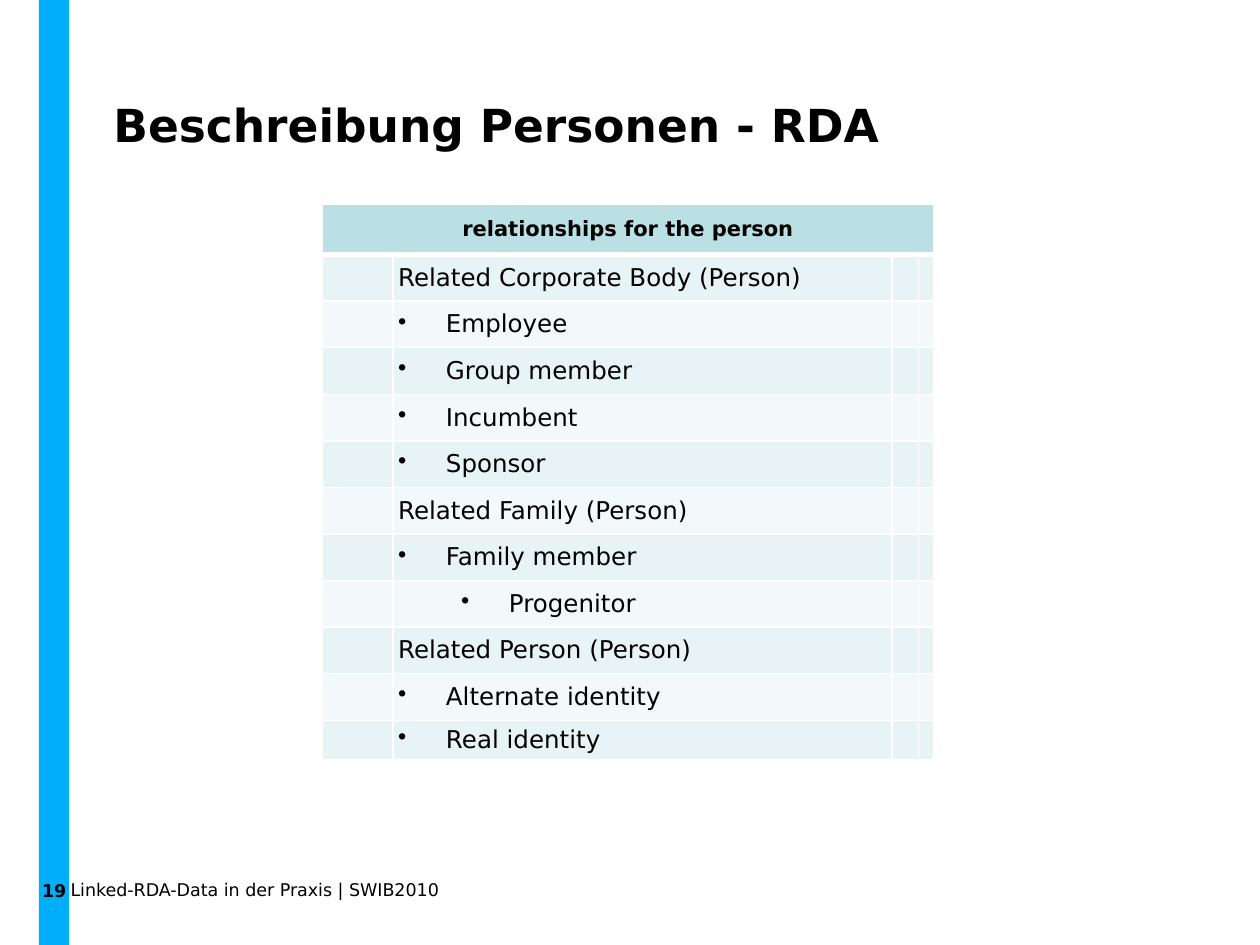
from dataclasses import dataclass

from lxml.etree import SubElement
from pptx import Presentation
from pptx.dml.color import RGBColor
from pptx.enum.shapes import MSO_SHAPE
from pptx.enum.text import MSO_ANCHOR as Anchor, PP_ALIGN as Align
from pptx.oxml.ns import qn
from pptx.util import Inches, Pt


@dataclass(frozen=True)
class Theme:
    font: str = "DejaVu Sans"
    text: str = "000000"
    bar: str = "00AEFA"
    header: str = "BBE0E3"
    bands: tuple = ("E7F3F4", "F3F9FA")
    border: str = "FFFFFF"
    title_size: int = 26
    body_size: int = 14
    header_size: int = 12
    small_size: int = 10


COLUMN_WIDTHS = (0.56, 3.96, 0.21, 0.11)
ROW_HEIGHTS = (0.4, *[0.37] * 10, 0.3)
CELL_MARGIN = Inches(0.04)
HANGING = 0.38
LEVEL_STEP = 0.5

# Bullet level (0 = heading without bullet) and wording of each row
RELATIONSHIPS = (
    (0, "Related Corporate Body (Person)"),
    (1, "Employee"),
    (1, "Group member"),
    (1, "Incumbent"),
    (1, "Sponsor"),
    (0, "Related Family (Person)"),
    (1, "Family member"),
    (2, "Progenitor"),
    (0, "Related Person (Person)"),
    (1, "Alternate identity"),
    (1, "Real identity"),
)


class PageBuilder:
    def __init__(self, page, theme):
        self.page = page
        self.theme = theme

    def add_span(self, para, text, size, bold=False):
        span = para.add_run()
        span.text = text
        span.font.name = self.theme.font
        span.font.size = Pt(size)
        span.font.bold = bold
        span.font.color.rgb = RGBColor.from_string(self.theme.text)

    def clear_insets(self, frame):
        frame.margin_left = frame.margin_right = 0
        frame.margin_top = frame.margin_bottom = 0

    def add_text(self, area, text, size, bold=False, line_spacing=None):
        box = self.page.shapes.add_textbox(*map(Inches, area))
        frame = box.text_frame
        frame.word_wrap = True
        self.clear_insets(frame)
        para = frame.paragraphs[0]
        if line_spacing:
            para.line_spacing = Pt(line_spacing)
        self.add_span(para, text, size, bold)

    def add_side_bar(self, area, number):
        bar = self.page.shapes.add_shape(MSO_SHAPE.RECTANGLE, *map(Inches, area))
        bar.shadow.inherit = False
        bar.fill.solid()
        bar.fill.fore_color.rgb = RGBColor.from_string(self.theme.bar)
        bar.line.fill.background()
        frame = bar.text_frame
        frame.word_wrap = False
        self.clear_insets(frame)
        frame.margin_bottom = Inches(0.35)
        frame.vertical_anchor = Anchor.BOTTOM
        para = frame.paragraphs[0]
        para.alignment = Align.CENTER
        self.add_span(para, number, self.theme.small_size, bold=True)

    def style_cell(self, cell, color, top=1, bottom=1):
        """Set margins, borders (widths in points) and fill."""
        cell.margin_left = cell.margin_right = CELL_MARGIN
        cell.margin_top = cell.margin_bottom = CELL_MARGIN
        cell.vertical_anchor = Anchor.MIDDLE
        properties = cell._tc.get_or_add_tcPr()
        for side, width in (("L", 1), ("R", 1), ("T", top), ("B", bottom)):
            line = SubElement(properties, qn(f"a:ln{side}"), w=str(Pt(width)))
            fill = SubElement(line, qn("a:solidFill"))
            SubElement(fill, qn("a:srgbClr"), val=self.theme.border)
        cell.fill.solid()
        cell.fill.fore_color.rgb = RGBColor.from_string(color)

    def set_empty_size(self, cell):
        """Keep the default text size from stretching the row of an empty cell."""
        para = cell.text_frame.paragraphs[0]
        SubElement(para._p, qn("a:endParaRPr"), sz=str(self.theme.small_size * 100))

    def add_bullet(self, para, level):
        properties = para._p.get_or_add_pPr()
        indent = HANGING + (level - 1) * LEVEL_STEP
        properties.set("marL", str(Inches(indent)))
        properties.set("indent", str(Inches(-HANGING)))
        SubElement(properties, qn("a:buChar"), char="•")
        para.level = level - 1

    def add_relationship_table(self, left, top, heading, entries):
        theme = self.theme
        table = self.page.shapes.add_table(
            len(entries) + 1, len(COLUMN_WIDTHS), Inches(left), Inches(top),
            Inches(sum(COLUMN_WIDTHS)), Inches(sum(ROW_HEIGHTS))).table
        table.first_row = table.horz_banding = False
        for column, width in zip(table.columns, COLUMN_WIDTHS):
            column.width = Inches(width)
        for row, height in zip(table.rows, ROW_HEIGHTS):
            row.height = Inches(height)

        for cell in table.rows[0].cells:
            self.style_cell(cell, theme.header, bottom=3)
        title_cell = table.cell(0, 0)
        title_cell.merge(table.cell(0, len(COLUMN_WIDTHS) - 1))
        para = title_cell.text_frame.paragraphs[0]
        para.alignment = Align.CENTER
        self.add_span(para, heading, theme.header_size, bold=True)

        for index, (level, text) in enumerate(entries):
            for column, cell in enumerate(table.rows[index + 1].cells):
                self.style_cell(cell, theme.bands[index % 2], top=1 if index else 3)
                if column != 1:
                    self.set_empty_size(cell)
                    continue
                para = cell.text_frame.paragraphs[0]
                if level:
                    self.add_bullet(para, level)
                self.add_span(para, text, theme.body_size)


def main():
    deck = Presentation()
    deck.slide_width, deck.slide_height = Inches(10), Inches(7.5)
    theme = Theme()
    builder = PageBuilder(deck.slides.add_slide(deck.slide_layouts[6]), theme)
    builder.add_side_bar((0.31, 0, 0.24, 7.5), "19")
    builder.add_text((0.9, 0.79, 8.3, 0.85), "Beschreibung Personen - RDA",
                     theme.title_size, bold=True, line_spacing=30)
    builder.add_relationship_table(2.56, 1.62, "relationships for the person",
                                   RELATIONSHIPS)
    builder.add_text((0.56, 6.98, 8.61, 0.17),
                     "Linked-RDA-Data in der Praxis | SWIB2010", theme.small_size)
    deck.save("out.pptx")


if __name__ == "__main__":
    main()
